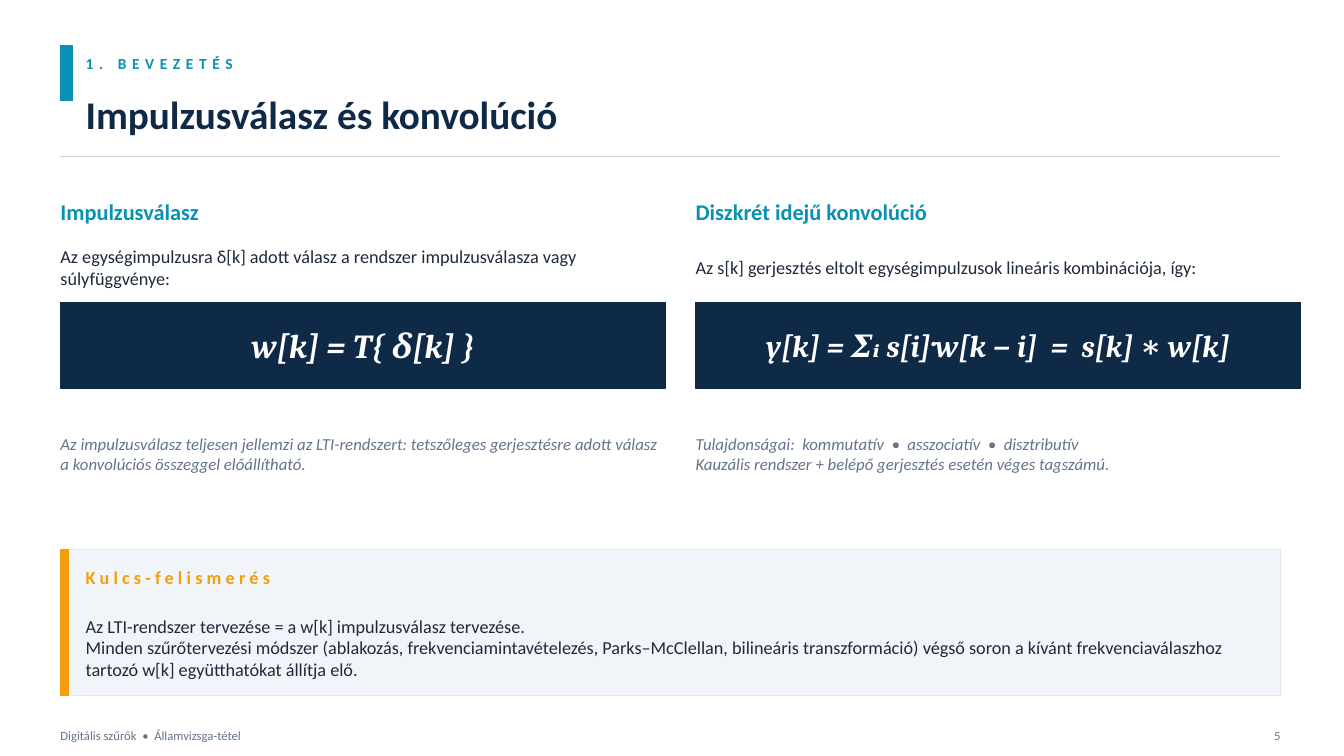
"""Build the slide on impulse response and convolution."""
from dataclasses import dataclass

from lxml.etree import SubElement
from pptx import Presentation
from pptx.dml.color import RGBColor
from pptx.enum.shapes import MSO_CONNECTOR as Connector, MSO_SHAPE as Shape
from pptx.enum.text import MSO_ANCHOR as Anchor, PP_ALIGN as Align
from pptx.oxml.ns import qn
from pptx.util import Inches, Pt

SECTION = "1. BEVEZETÉS"
TITLE = "Impulzusválasz és konvolúció"
TOPICS = [
    {
        "heading": "Impulzusválasz",
        "intro": "Az egységimpulzusra δ[k] adott válasz a rendszer impulzusválasza vagy súlyfüggvénye:",
        "formula": "w[k] = T{ δ[k] }",
        "formula_size": 24,
        "remarks": [
            "Az impulzusválasz teljesen jellemzi az LTI-rendszert: tetszőleges gerjesztésre "
            "adott válasz a konvolúciós összeggel előállítható.",
        ],
    },
    {
        "heading": "Diszkrét idejű konvolúció",
        "intro": "Az s[k] gerjesztés eltolt egységimpulzusok lineáris kombinációja, így:",
        "formula": "y[k] = Σᵢ s[i]·w[k − i]  =  s[k] ∗ w[k]",
        "formula_size": 22,
        "remarks": [
            "Tulajdonságai:  kommutatív  •  asszociatív  •  disztributív",
            "Kauzális rendszer + belépő gerjesztés esetén véges tagszámú.",
        ],
    },
]
INSIGHT_HEADING = "Kulcs-felismerés"
INSIGHT = [
    "Az LTI-rendszer tervezése = a w[k] impulzusválasz tervezése.",
    "Minden szűrőtervezési módszer (ablakozás, frekvenciamintavételezés, Parks–McClellan, "
    "bilineáris transzformáció) végső soron a kívánt frekvenciaválaszhoz tartozó w[k] "
    "együtthatókat állítja elő.",
]
FOOTER = "Digitális szűrők  •  Államvizsga-tétel"
PAGE_NUMBER = "5"


@dataclass(frozen=True)
class Theme:
    """Colours, fonts and type sizes."""

    teal: str = "0891B2"
    navy: str = "0F2A47"
    ink: str = "1E293B"
    muted: str = "64748B"
    amber: str = "F59E0B"
    rule: str = "CBD5E1"
    panel: str = "F1F5F9"
    panel_edge: str = "E2E8F0"
    white: str = "FFFFFF"
    text_font: str = "Calibri"
    formula_font: str = "Cambria"
    title: int = 28
    heading: int = 16
    body: int = 13
    remark: int = 12
    section: int = 11
    footer: int = 9


THEME = Theme()
LEFT, CONTENT_WIDTH = 0.6, 12.1
RIGHT = LEFT + CONTENT_WIDTH
INDENT = 0.85
COLUMN_WIDTH, COLUMN_GAP = 6, 0.3
PANEL_TOP, PANEL_HEIGHT = 5.45, 1.45
FOOTER_TOP, FOOTER_HEIGHT = 7.15, 0.3


def add_block(slide, bounds, fill, edge=None):
    """Add a filled rectangle with a thin edge."""
    block = slide.shapes.add_shape(Shape.RECTANGLE, *map(Inches, bounds))
    block.shadow.inherit = False
    block.fill.solid()
    block.fill.fore_color.rgb = RGBColor.from_string(fill)
    block.line.color.rgb = RGBColor.from_string(edge or fill)
    block.line.width = Pt(1)


def add_text(slide, bounds, lines, size, color, font=THEME.text_font,
             bold=False, italic=False, align=Align.LEFT, spacing=0):
    """Add a text box with one paragraph per line; spacing is in points."""
    frame = slide.shapes.add_textbox(*map(Inches, bounds)).text_frame
    frame.word_wrap = True
    frame.vertical_anchor = Anchor.MIDDLE
    frame.margin_left = frame.margin_right = frame.margin_top = frame.margin_bottom = 0
    for number, line in enumerate(lines):
        paragraph = frame.add_paragraph() if number else frame.paragraphs[0]
        paragraph.alignment = align
        run = paragraph.add_run()
        run.text = line
        run.font.name = font
        run.font.size = Pt(size)
        run.font.bold = bold
        run.font.italic = italic
        run.font.color.rgb = RGBColor.from_string(color)
        if spacing:
            run.font._element.set("spc", str(spacing * 100))


def add_header(slide):
    """Add the section label, title and dividing rule."""
    add_block(slide, (LEFT, 0.45, 0.12, 0.55), THEME.teal)
    add_text(slide, (INDENT, 0.45, 8, 0.35), [SECTION], THEME.section, THEME.teal,
             bold=True, spacing=4)
    add_text(slide, (INDENT, 0.78, 12, 0.7), [TITLE], THEME.title, THEME.navy, bold=True)
    rule = slide.shapes.add_connector(
        Connector.STRAIGHT, *map(Inches, (LEFT, 1.55, RIGHT, 1.55)))
    rule.line.color.rgb = RGBColor.from_string(THEME.rule)
    rule.line.width = Pt(0.75)
    SubElement(rule._element.spPr, qn("a:effectLst"))


def add_topic(slide, left, topic):
    """Add one column: heading, intro, formula and remarks."""
    def row(top, height):
        return left, top, COLUMN_WIDTH, height

    add_text(slide, row(1.9, 0.4), [topic["heading"]], THEME.heading, THEME.teal, bold=True)
    add_text(slide, row(2.35, 0.6), [topic["intro"]], THEME.body, THEME.ink)
    add_block(slide, row(3, 0.85), THEME.navy)
    add_text(slide, row(3, 0.85), [topic["formula"]], topic["formula_size"], THEME.white,
             font=THEME.formula_font, bold=True, italic=True, align=Align.CENTER)
    add_text(slide, row(4, 1), topic["remarks"], THEME.remark, THEME.muted, italic=True)


def add_insight(slide):
    """Add the key insight panel."""
    add_block(slide, (LEFT, PANEL_TOP, CONTENT_WIDTH, PANEL_HEIGHT),
              THEME.panel, THEME.panel_edge)
    add_block(slide, (LEFT, PANEL_TOP, 0.08, PANEL_HEIGHT), THEME.amber)
    add_text(slide, (INDENT, PANEL_TOP + 0.1, 11.8, 0.35), [INSIGHT_HEADING],
             THEME.body, THEME.amber, bold=True, spacing=3)
    add_text(slide, (INDENT, PANEL_TOP + 0.5, 11.8, 0.95), INSIGHT, THEME.body, THEME.ink)


def add_footer(slide):
    """Add the footer text and page number."""
    add_text(slide, (LEFT, FOOTER_TOP, 8, FOOTER_HEIGHT), [FOOTER], THEME.footer, THEME.muted)
    add_text(slide, (RIGHT - 0.3, FOOTER_TOP, 0.3, FOOTER_HEIGHT), [PAGE_NUMBER],
             THEME.footer, THEME.muted, align=Align.RIGHT)


def main():
    """Build and save the presentation."""
    deck = Presentation()
    deck.slide_width, deck.slide_height = Inches(13.33), Inches(7.5)
    slide = deck.slides.add_slide(deck.slide_layouts[6])
    slide.background.fill.solid()
    slide.background.fill.fore_color.rgb = RGBColor.from_string(THEME.white)
    add_header(slide)
    for column, topic in enumerate(TOPICS):
        add_topic(slide, LEFT + column * (COLUMN_WIDTH + COLUMN_GAP), topic)
    add_insight(slide)
    add_footer(slide)
    deck.save("out.pptx")


if __name__ == "__main__":
    main()
